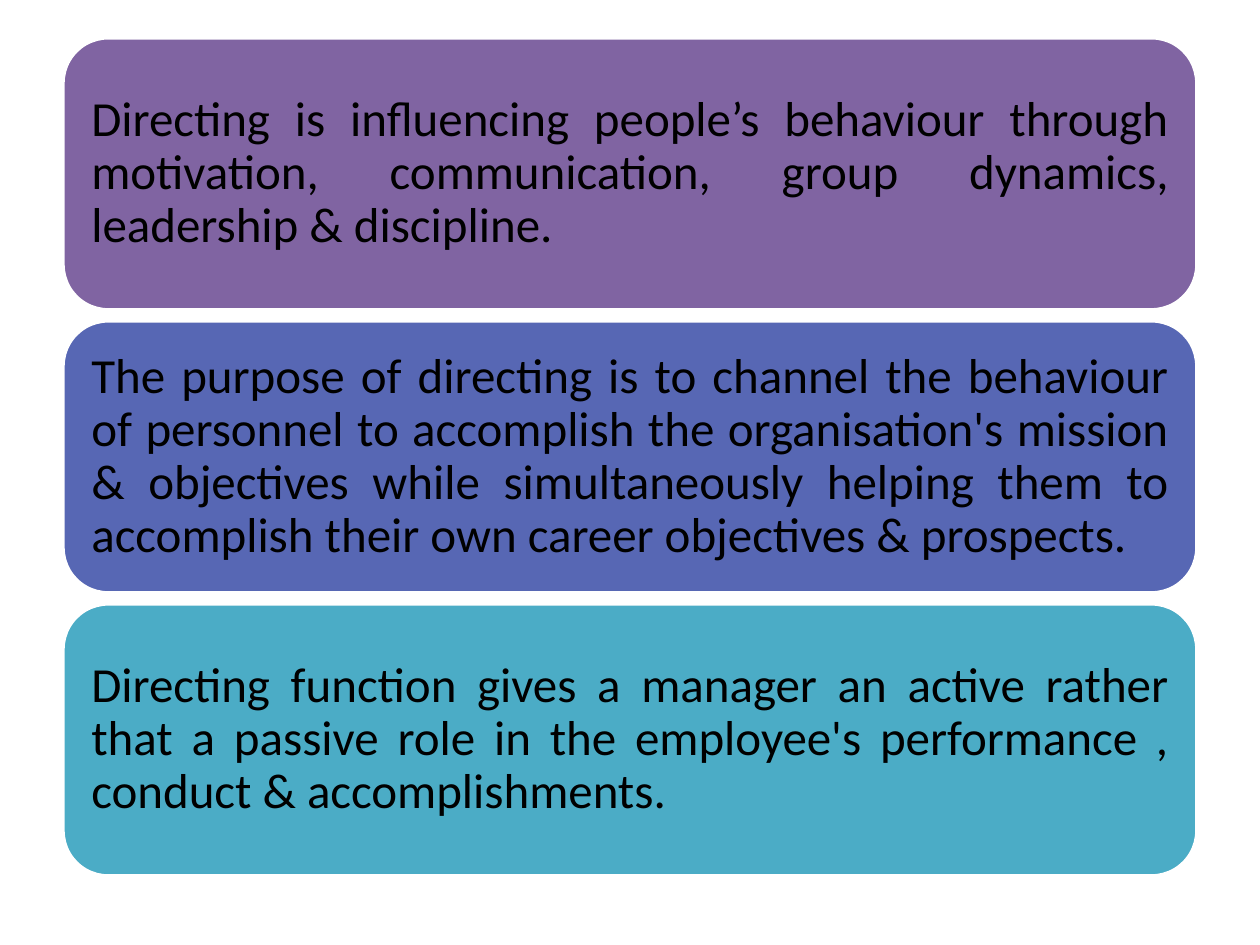
from pptx import Presentation
from pptx.dml.color import RGBColor
from pptx.enum.shapes import MSO_SHAPE
from pptx.enum.text import MSO_ANCHOR, PP_ALIGN
from pptx.util import Inches, Pt

ROUND = MSO_SHAPE.ROUNDED_RECTANGLE
MIDDLE = MSO_ANCHOR.MIDDLE
JUSTIFY = PP_ALIGN.JUSTIFY

COLORS = {
    "purple": "8064A2",
    "blue": "5767B4",
    "teal": "4BACC6",
    "line": "FFFFFF",
    "text": "000000",
}
PANELS = [
    ("purple", "Directing is influencing people’s behaviour through motivation, "
               "communication, group dynamics, leadership & discipline."),
    ("blue", "The purpose of directing is to channel the behaviour of personnel "
             "to accomplish the organisation's mission & objectives while "
             "simultaneously helping them to accomplish their own career "
             "objectives & prospects."),
    ("teal", "Directing function gives a manager an active rather that a passive "
             "role in the employee's performance , conduct & accomplishments."),
]
WIDTH, HEIGHT = Inches(10), Inches(7.5)
LEFT = WIDTH * 0.05
TOP = HEIGHT * 0.04
TALL = Inches(2.16)
STEP = TALL * 1.04
PAD = Inches(0.12)


def color(name):
    return RGBColor.from_string(COLORS[name])


def add_panel(slide, row, fill, text):
    panel = slide.shapes.add_shape(
        ROUND, int(LEFT), int(TOP + row * STEP), int(WIDTH - 2 * LEFT), TALL)
    panel.shadow.inherit = False
    panel.fill.solid()
    panel.fill.fore_color.rgb = color(fill)
    panel.line.color.rgb = color("line")
    panel.line.width = Pt(2)

    frame = panel.text_frame
    frame.text = text
    frame.word_wrap = True
    frame.vertical_anchor = MIDDLE
    frame.margin_left = frame.margin_right = PAD
    frame.margin_top = frame.margin_bottom = PAD
    para = frame.paragraphs[0]
    para.alignment = JUSTIFY
    para.line_spacing = 0.9
    para.space_after = Pt(10)
    font = para.runs[0].font
    font.name = "Calibri"
    font.size = Pt(28)
    font.color.rgb = color("text")


def main():
    deck = Presentation()
    deck.slide_width, deck.slide_height = WIDTH, HEIGHT
    slide = deck.slides.add_slide(deck.slide_layouts[6])
    for row, (fill, text) in enumerate(PANELS):
        add_panel(slide, row, fill, text)
    deck.save("out.pptx")


if __name__ == "__main__":
    main()
